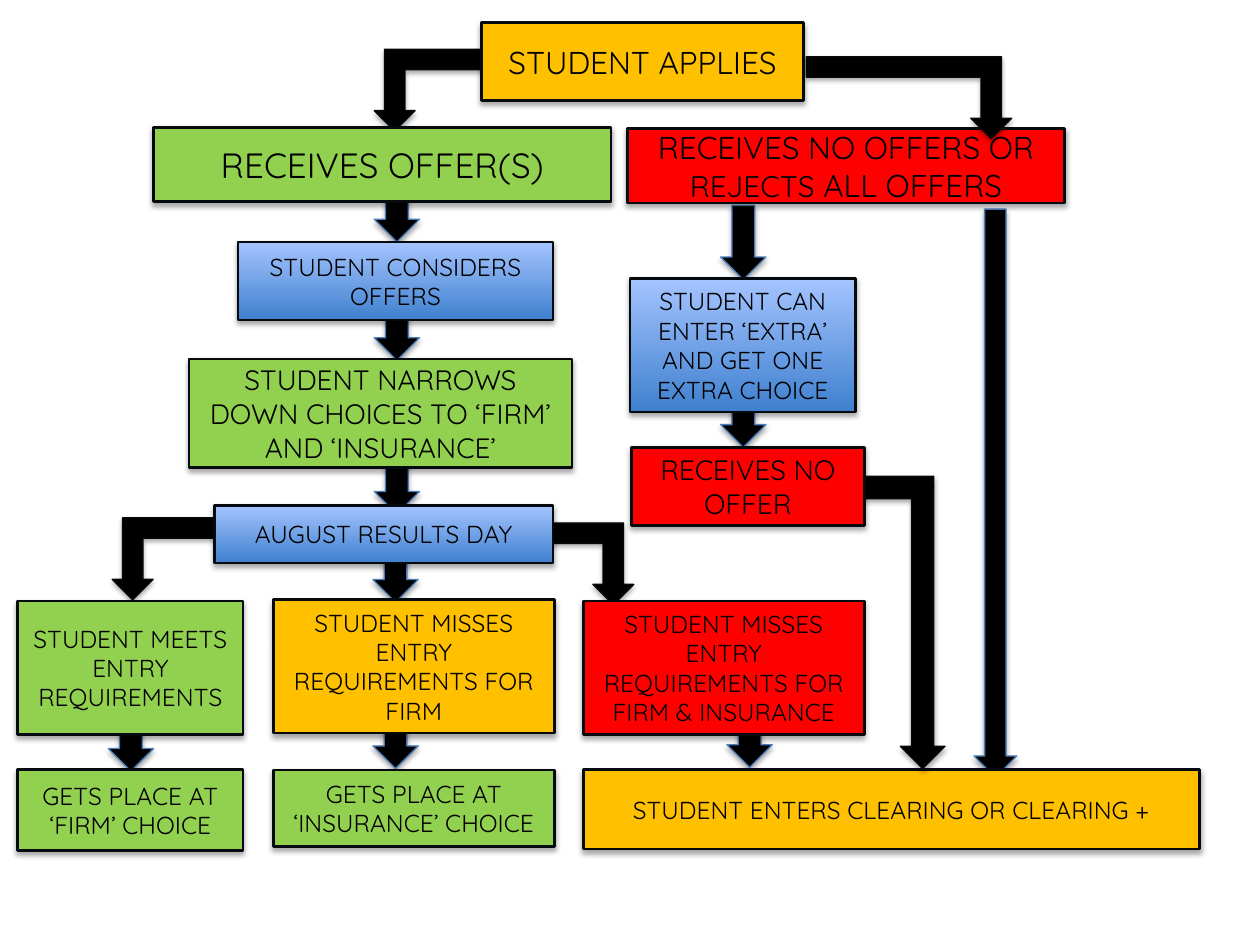
from lxml import etree
from pptx import Presentation, util as u
from pptx.dml.color import RGBColor
from pptx.enum import shapes as s, text as t
from pptx.oxml import ns

COLS, ROWS = 100, 75
CELL = u.Inches(0.1)
FONT = "Quicksand"
BLACK, EDGE, BLUE = "000000", "050A0F", "4B7EBC"
GREEN, AMBER, RED = "92D050", "FFC000", "FF0000"
SKY = ("3F80CE", "A4C4FF")
STEM, DROP = 3.6, 4.2  # usual size of a down arrow

# Left, top, width, height in cells
DOWNS = [
    (57.2, 16.3, STEM, 5.9),
    (77.3, 16.6, 3.4, 45.1),
    *[(x, y, STEM, DROP) for x, y in [
        (29.7, 15), (57.7, 56.7), (57.2, 31.3), (29.6, 56.8),
        (8.6, 57), (29.6, 43.6), (29.7, 36.6), (29.7, 24.4)]],
]
# As above, then whether the arrow turns right
RESULT_BENDS = [(8.9, 41.1, 13.3, 6.5, False), (39.1, 41.5, 11.2, 6.5, True)]
APPLY_BENDS = [(29.7, 3.9, 9.4, 6.5, False), (64, 4.5, 16.3, 6.5, True)]
EXTRA_BEND = (67.9, 37.8, 7.1, 23.2, True)

# Place, fill, then runs of (text, size)
STEPS = [
    ((49.8, 10.2, 34.7, 5.9), RED,
     [("RECEIVES NO OFFERS OR ", 18), ("REJECTS", 17), (" ALL OFFERS", 18)]),
    ((18.9, 19.2, 25, 6.2), SKY, [("STUDENT CONSIDERS OFFERS", 14)]),
    ((15, 28.5, 30.4, 8.6), GREEN,
     [("STUDENT NARROWS DOWN CHOICES TO ‘FIRM’ AND ‘INSURANCE’", 16)]),
    ((17, 40.1, 26.9, 4.6), SKY, [("AUGUST RESULTS DAY", 14)]),
    ((1.4, 47.7, 17.9, 10.6), GREEN, [("STUDENT MEETS ENTRY REQUIREMENTS", 14)]),
    ((21.7, 47.6, 22.3, 10.6), AMBER,
     [("STUDENT MISSES ENTRY REQUIREMENTS FOR FIRM", 14)]),
    ((46.3, 47.7, 22.3, 10.6), RED,
     [("STUDENT MISSES ENTRY REQUIREMENTS FOR FIRM & INSURANCE", 14)]),
    ((1.4, 61.1, 17.9, 6.4), GREEN, [("GETS PLACE AT ‘FIRM’ CHOICE", 14)]),
    ((21.7, 61.1, 22.3, 6.1), GREEN, [("GETS PLACE AT ‘INSURANCE’ CHOICE", 14)]),
    ((46.3, 61.1, 48.9, 6.3), AMBER,
     [("STUDENT ENTERS CLEARING OR CLEARING +", 14)]),
    ((50, 22.1, 17.9, 10.6), SKY,
     [("STUDENT CAN ENTER ‘EXTRA’ AND GET ONE EXTRA CHOICE", 14)]),
]
STARTS = [
    ((38.2, 1.8, 25.6, 6.2), AMBER, [("STUDENT APPLIES", 18)]),
    ((12.2, 10.1, 36.3, 5.9), GREEN, [("RECEIVES OFFER(S)", 20)]),
]
NO_EXTRA = ((50.1, 35.5, 18.5, 6.2), RED, [("RECEIVES NO OFFER", 16)])


def paint(fmt, color):
    fmt.rgb = RGBColor.from_string(color)


def shade(shape):
    """Put a soft shadow straight below the shape."""
    shape.shadow.inherit = False
    fx = shape._element.spPr.find(ns.qn("a:effectLst"))
    outer = etree.SubElement(
        fx, ns.qn("a:outerShdw"), blurRad=str(u.Pt(3.1)),
        dist=str(u.Pt(1.8)), dir="5400000", rotWithShape="0")
    tint = etree.SubElement(outer, ns.qn("a:srgbClr"), val=BLACK)
    etree.SubElement(tint, ns.qn("a:alpha"), val="35000")


def add_form(slide, kind, place, fill, edge, width):
    """Add a preset shape, filled with one colour or a pair from the bottom up."""
    shape = slide.shapes.add_shape(kind, *[round(n * CELL) for n in place])
    if isinstance(fill, tuple):
        shape.fill.gradient()
        shape.fill.gradient_angle = 90
        for stop, color in zip(shape.fill.gradient_stops, fill):
            paint(stop.color, color)
            stop.position = fill.index(color)
    else:
        shape.fill.solid()
        paint(shape.fill.fore_color, fill)
    paint(shape.line.color, edge)
    shape.line.width = u.Pt(width)
    shade(shape)
    return shape


def add_box(slide, place, fill, runs):
    box = add_form(slide, s.MSO_SHAPE.RECTANGLE, place, fill, EDGE, 1.5)
    frame = box.text_frame
    frame.word_wrap = True
    frame.vertical_anchor = t.MSO_ANCHOR.MIDDLE
    para = frame.paragraphs[0]
    para.alignment = t.PP_ALIGN.CENTER
    for words, size in runs:
        run = para.add_run()
        run.text = words
        run.font.name = FONT
        run.font.size = u.Pt(size)
        paint(run.font.color, BLACK)


def add_down(slide, *place):
    add_form(slide, s.MSO_SHAPE.DOWN_ARROW, place, BLACK, BLUE, 0.75)


def add_bend(slide, x, y, w, h, right):
    """Add an arrow that runs sideways, then down."""
    bend = add_form(slide, s.MSO_SHAPE.BENT_UP_ARROW, (x, y, w, h),
                    BLACK, EDGE, 0.75)
    bend.rotation = 180
    if right:
        bend._element.spPr.xfrm.set("flipH", "1")


def main():
    deck = Presentation()
    deck.slide_width, deck.slide_height = COLS * CELL, ROWS * CELL
    slide = deck.slides.add_slide(deck.slide_layouts[6])
    for down in DOWNS:
        add_down(slide, *down)
    for bend in RESULT_BENDS:
        add_bend(slide, *bend)
    for step in STEPS:
        add_box(slide, *step)
    for bend in APPLY_BENDS:
        add_bend(slide, *bend)
    for start in STARTS:
        add_box(slide, *start)
    add_bend(slide, *EXTRA_BEND)
    add_box(slide, *NO_EXTRA)
    deck.save("out.pptx")


if __name__ == "__main__":
    main()
